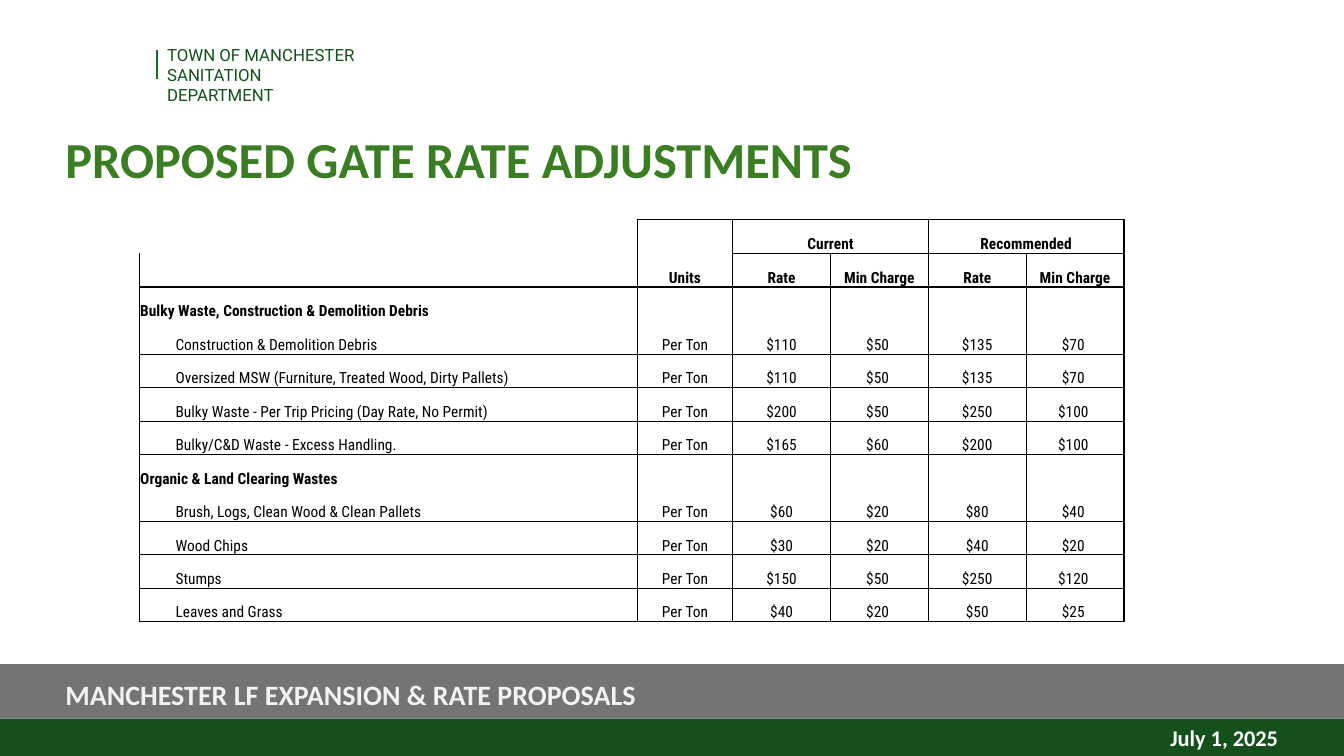
from lxml.etree import SubElement
from pptx import Presentation
from pptx.dml.color import RGBColor
from pptx.enum.shapes import MSO_CONNECTOR as CONN, MSO_SHAPE as SHAPE
from pptx.enum.text import MSO_ANCHOR as ANCHOR, MSO_AUTO_SIZE as AUTO, PP_ALIGN as ALIGN
from pptx.oxml.ns import qn
from pptx.util import Pt

COLORS = {"dark": "13501B", "rule": "196B24", "title": "3B7D23", "gray": "747474",
          "light": "F2F2F2", "white": "FFFFFF", "black": "000000"}


def add_run(p, text, font, size, color, bold=False):
    r = p.add_run()
    r.text = text
    r.font.name, r.font.size, r.font.bold = font, Pt(size), bold
    r.font.color.rgb = RGBColor.from_string(COLORS[color])


def add_border(cell, side, width):
    ln = SubElement(cell._tc.get_or_add_tcPr(), qn(f"a:{side}"), w=str(Pt(width)))
    if width:
        fill = SubElement(ln, qn("a:solidFill"))
        SubElement(fill, qn("a:srgbClr"), val=COLORS["black"])
    else:
        SubElement(ln, qn("a:noFill"))


prs = Presentation()
prs.slide_width, prs.slide_height = Pt(960), Pt(540)
s = prs.slides.add_slide(prs.slide_layouts[6])

# Footer bars
for top, height, color in [(513.4, 26.6, "dark"), (474.4, 39, "gray")]:
    sp = s.shapes.add_shape(SHAPE.RECTANGLE, 0, Pt(top), Pt(960), Pt(height))
    sp.shadow.inherit = False
    sp.fill.solid()
    sp.fill.fore_color.rgb = RGBColor.from_string(COLORS[color])
    sp.line.fill.background()

# Department rule
rule = s.shapes.add_connector(CONN.STRAIGHT, Pt(112.3), Pt(36), Pt(112.3), Pt(56.2))
rule.line.color.rgb = RGBColor.from_string(COLORS["rule"])
rule.line.width = Pt(1.5)
SubElement(rule._element.spPr, qn("a:effectLst"))

# Department, title and footer texts
texts = [
    (112.3, 28.1, 153.4, 36, ["TOWN OF MANCHESTER", "SANITATION DEPARTMENT"],
     "Roboto", 12, "dark", False, ALIGN.LEFT, ANCHOR.TOP, 1),
    (39.6, 88.6, 775.4, 50.4, ["PROPOSED GATE RATE ADJUSTMENTS"],
     "Calibri", 36, "title", True, ALIGN.LEFT, ANCHOR.BOTTOM, 0.9),
    (39.6, 480.2, 881.3, 31.5, ["MANCHESTER LF EXPANSION & RATE PROPOSALS"],
     "Calibri", 20, "light", True, ALIGN.LEFT, ANCHOR.TOP, 1),
    (775.4, 513.4, 144.7, 26.6, ["July 1, 2025"],
     "Calibri", 16, "white", True, ALIGN.RIGHT, ANCHOR.TOP, 1),
]
for left, top, width, height, lines, font, size, color, bold, align, anchor, spacing in texts:
    tf = s.shapes.add_textbox(Pt(left), Pt(top), Pt(width), Pt(height)).text_frame
    tf.word_wrap, tf.auto_size, tf.vertical_anchor = True, AUTO.NONE, anchor
    for i, line in enumerate(lines):
        p = tf.add_paragraph() if i else tf.paragraphs[0]
        p.alignment, p.line_spacing = align, spacing
        add_run(p, line, font, size, color, bold)

# Rate table: columns are indent, item, units, then two rate and charge pairs
rows = [
    ["", "", "", "Current", "", "Recommended", ""],
    ["", "", "Units", "Rate", "Min Charge", "Rate", "Min Charge"],
    ["Bulky Waste, Construction & Demolition Debris"] + [""] * 6,
    ["", "Construction & Demolition Debris", "Per Ton", "$110", "$50 ", "$135", "$70 "],
    ["", "Oversized MSW (Furniture, Treated Wood, Dirty Pallets)", "Per Ton",
     "$110", "$50 ", "$135", "$70 "],
    ["", "Bulky Waste - Per Trip Pricing (Day Rate, No Permit)", "Per Ton",
     "$200", "$50 ", "$250", "$100 "],
    ["", "Bulky/C&D Waste - Excess Handling.", "Per Ton", "$165", "$60 ", "$200", "$100 "],
    ["Organic & Land Clearing Wastes"] + [""] * 6,
    ["", "Brush, Logs, Clean Wood & Clean Pallets", "Per Ton", "$60", "$20 ", "$80", "$40 "],
    ["", "Wood Chips", "Per Ton", "$30", "$20 ", "$40", "$20 "],
    ["", "Stumps", "Per Ton", "$150", "$50 ", "$250", "$120 "],
    ["", "Leaves and Grass", "Per Ton", "$40", "$20 ", "$50", "$25 "],
]
col_widths = [25.2, 330.5, 68.2] + [69.9] * 4
row_heights = [24.2, 24.2] + [23.9] * 10
sections = (2, 7)

table = s.shapes.add_table(len(rows), len(col_widths), Pt(99.5), Pt(156.7),
                           Pt(sum(col_widths)), Pt(sum(row_heights))).table
table.first_row = table.horz_banding = False
for column, width in zip(table.columns, col_widths):
    column.width = Pt(width)
for row, height in zip(table.rows, row_heights):
    row.height = Pt(height)
for r, c in [(0, 3), (0, 5)] + [(r, 0) for r in sections]:
    table.cell(r, c).merge(table.cell(r, c + 1))

# Border widths by grid line: verticals by row, horizontals by column
verticals = [[0, 0, 1, 1, 0, 1, 0, 1]] + [[1, 0, 1, 1, 0.5, 1, 0.5, 1]] * 11
horizontals = [[0, 0] + [1] * 5, [0] * 3 + [0.5] * 4]
horizontals += [[w] * 7 for w in (1, 0, 0.5, 0.5, 0.5, 1, 0, 0.5, 0.5, 0.5, 1)]

for r, row in enumerate(rows):
    for c, text in enumerate(row):
        cell = table.cell(r, c)
        cell.margin_left = cell.margin_right = cell.margin_top = Pt(0.7)
        cell.margin_bottom = 0
        cell.vertical_anchor = ANCHOR.BOTTOM
        right = c + (cell.span_width if cell.is_merge_origin else 1)
        add_border(cell, "lnL", verticals[r][c])
        add_border(cell, "lnR", verticals[r][right])
        add_border(cell, "lnT", horizontals[r][c])
        add_border(cell, "lnB", horizontals[r + 1][c])
        cell.fill.background()
        p = cell.text_frame.paragraphs[0]
        p.alignment = ALIGN.CENTER if c > 1 else ALIGN.LEFT
        if text:
            add_run(p, text, "Roboto Condensed", 11, "black", r < 2 or r in sections)
        else:
            SubElement(p._p, qn("a:endParaRPr"), sz="1100")

prs.save("out.pptx")
